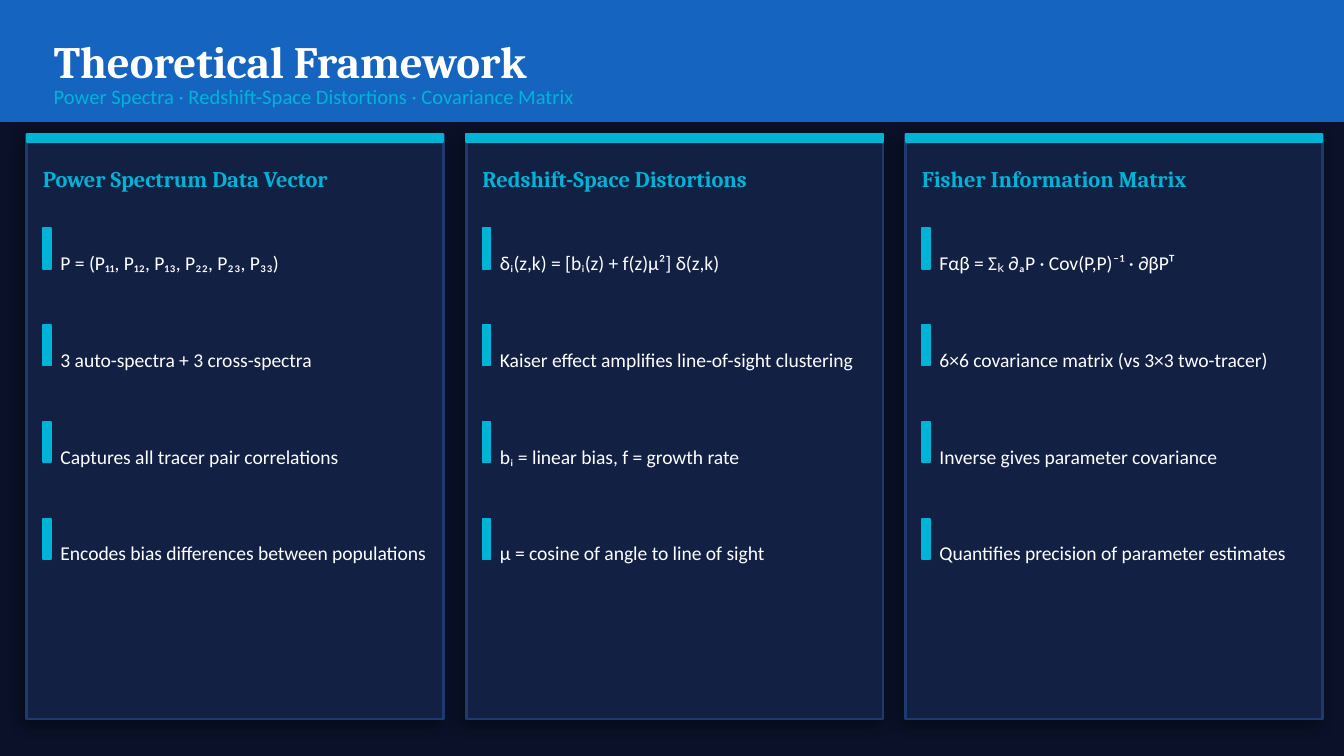
from lxml import etree
from pptx import Presentation
from pptx.dml.color import RGBColor
from pptx.enum.shapes import MSO_SHAPE as Shape
from pptx.enum.text import MSO_ANCHOR as Anchor, MSO_AUTO_SIZE as AutoSize, PP_ALIGN as Align
from pptx.oxml.ns import qn
from pptx.util import Inches, Pt

NAVY, BLUE, CYAN, WHITE = "0A1128", "1565C0", "00B4D8", "FFFFFF"
PANEL, PANEL_EDGE = "122044", "1E3A6E"
HEADING_FONT, BODY_FONT = "Cambria", "Calibri"

COLUMNS = [
    ("Power Spectrum Data Vector", [
        "P = (P₁₁, P₁₂, P₁₃, P₂₂, P₂₃, P₃₃)",
        "3 auto-spectra + 3 cross-spectra",
        "Captures all tracer pair correlations",
        "Encodes bias differences between populations",
    ]),
    ("Redshift-Space Distortions", [
        "δᵢ(z,k) = [bᵢ(z) + f(z)μ²] δ(z,k)",
        "Kaiser effect amplifies line-of-sight clustering",
        "bᵢ = linear bias, f = growth rate",
        "μ = cosine of angle to line of sight",
    ]),
    ("Fisher Information Matrix", [
        "Fαβ = Σₖ ∂ₐP · Cov(P,P)⁻¹ · ∂βPᵀ",
        "6×6 covariance matrix (vs 3×3 two-tracer)",
        "Inverse gives parameter covariance",
        "Quantifies precision of parameter estimates",
    ]),
]


def colour(value):
    return RGBColor.from_string(value)


def add_block(page, left, top, width, height, fill, edge=None, weight=1):
    block = page.shapes.add_shape(
        Shape.RECTANGLE, Inches(left), Inches(top), Inches(width), Inches(height))
    block.shadow.inherit = False
    block.fill.solid()
    block.fill.fore_color.rgb = colour(fill)
    block.line.color.rgb = colour(edge or fill)
    block.line.width = Pt(weight)
    return block


def add_shadow(block):
    effects = block.element.spPr.find(qn("a:effectLst"))
    shadow = etree.SubElement(
        effects, qn("a:outerShdw"), blurRad=str(Pt(8)), dist=str(Pt(3)),
        dir=str(135 * 60000), algn="bl", rotWithShape="0")
    shade = etree.SubElement(shadow, qn("a:srgbClr"), val="000000")
    etree.SubElement(shade, qn("a:alpha"), val="40000")


def write(box, text, size, font, ink, bold=False):
    frame = box.text_frame
    frame.word_wrap = True
    frame.auto_size = AutoSize.NONE
    frame.vertical_anchor = Anchor.MIDDLE
    frame.margin_left = frame.margin_right = frame.margin_top = frame.margin_bottom = 0
    para = frame.paragraphs[0]
    para.alignment = Align.LEFT
    span = para.add_run()
    span.text = text
    span.font.size = Pt(size)
    span.font.name = font
    span.font.bold = bold
    span.font.color.rgb = colour(ink)


def add_label(page, left, top, width, height, *style, **options):
    box = page.shapes.add_textbox(
        Inches(left), Inches(top), Inches(width), Inches(height))
    write(box, *style, **options)


def add_header(page, left, top, width, height):
    banner = add_block(page, left, top, width, height, BLUE)
    title = page.shapes.title
    title.element.addprevious(banner.element)
    title.left, title.top = Inches(left + 0.4), Inches(top + 0.15)
    title.width, title.height = Inches(width - 0.8), Inches(0.6)
    write(title, "Theoretical Framework", 24, HEADING_FONT, WHITE, bold=True)
    add_label(page, left + 0.4, top + 0.58, width - 0.8, 0.28,
              "Power Spectra · Redshift-Space Distortions · Covariance Matrix",
              11, BODY_FONT, CYAN)


def add_column(page, left, top, width, height, heading, points):
    panel = add_block(page, left, top, width, height, PANEL, PANEL_EDGE, 1.5)
    add_shadow(panel)
    add_block(page, left, top, width, 0.06, CYAN)
    add_label(page, left + 0.12, top + 0.08, width - 0.24, 0.5,
              heading, 12, HEADING_FONT, CYAN, bold=True)
    for row, point in enumerate(points):
        row_top = top + 0.68 + row * 0.72
        add_block(page, left + 0.12, row_top + 0.02, 0.06, 0.3, CYAN)
        add_label(page, left + 0.25, row_top, width - 0.35, 0.55,
                  point, 10.5, BODY_FONT, WHITE)


def main():
    deck = Presentation()
    deck.slide_width = Inches(10)
    deck.slide_height = Inches(10) * 9 // 16
    page = deck.slides.add_slide(deck.slide_layouts[5])
    page.background.fill.solid()
    page.background.fill.fore_color.rgb = colour(NAVY)
    add_header(page, 0, 0, 10, 0.9)
    for index, (heading, points) in enumerate(COLUMNS):
        add_column(page, 0.2 + index * 3.27, 1, 3.1, 4.35, heading, points)
    deck.save("out.pptx")


if __name__ == "__main__":
    main()
